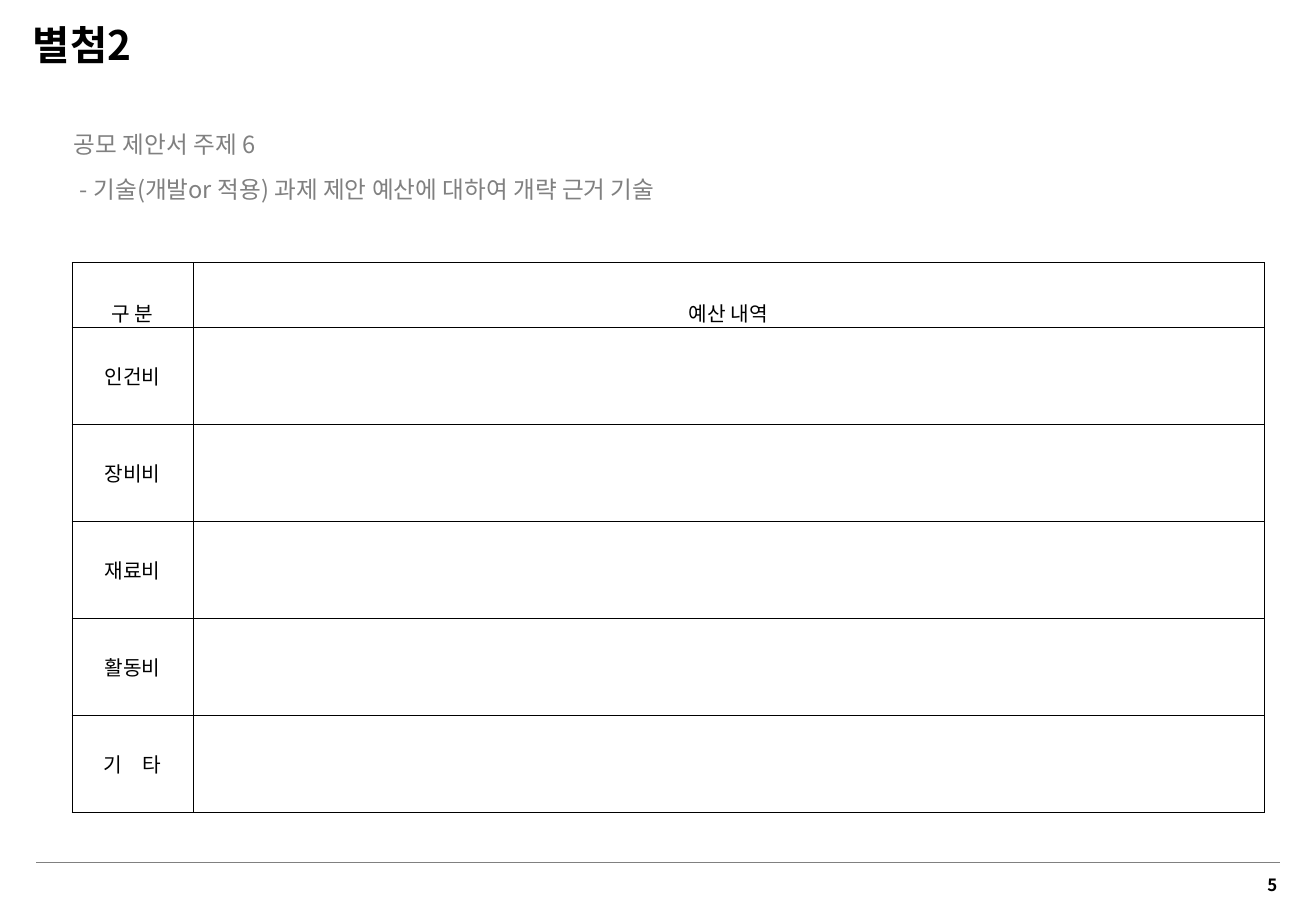
from dataclasses import dataclass

from lxml import etree
from pptx import Presentation
from pptx import util as u
from pptx.dml.color import RGBColor
from pptx.enum import shapes, text
from pptx.oxml import ns

TITLE = "별첨2"
GUIDE = [
    ("공모 제안서 주제 6", 0),
    ("- 기술(개발or 적용) 과제 제안 예산에 대하여 개략 근거 기술", 0.05),
]
HEADINGS = ["구 분", "예산 내역"]
COST_ITEMS = ["인건비", "장비비", "재료비", "활동비", "기　타"]
PAGE_NUMBER = "5"

COLUMN_WIDTHS = [1, 8.81]
HEADING_HEIGHT, ITEM_HEIGHT = 0.53, 0.8
TABLE_LEFT, TABLE_TOP = 0.59, 2.16


@dataclass(frozen=True)
class Theme:
    font: str = "Noto Sans CJK KR"
    black: str = "000000"
    grey: str = "808080"
    white: str = "FFFFFF"
    title: int = 24
    guide: int = 14
    table: int = 12
    page: int = 10
    border: float = 0.28
    rule: float = 0.75


THEME = Theme()
ALIGN = text.PP_ALIGN
MIDDLE = text.MSO_ANCHOR.MIDDLE


def style(paragraph, size, color, align, bold=False, spacing=1.0):
    paragraph.alignment = align
    paragraph.line_spacing = spacing
    paragraph.space_before = u.Pt(0)
    font = paragraph.font
    font.name, font.size, font.bold = THEME.font, u.Pt(size), bold
    font.color.rgb = RGBColor.from_string(color)
    properties = paragraph._p.pPr.find(ns.qn("a:defRPr"))
    etree.SubElement(properties, ns.qn("a:ea"), typeface=THEME.font)


def set_insets(frame, horizontal, vertical):
    frame.margin_left = frame.margin_right = u.Inches(horizontal)
    frame.margin_top = frame.margin_bottom = u.Inches(vertical)


def add_text_box(slide, left, top, width, height):
    box = slide.shapes.add_textbox(*map(u.Inches, (left, top, width, height)))
    box.text_frame.word_wrap = True
    return box.text_frame


def add_title(slide):
    title = slide.shapes.title
    title.left, title.top = u.Inches(0.17), u.Inches(0.13)
    title.width, title.height = u.Inches(5.24), u.Inches(0.47)
    frame = title.text_frame
    frame.text = TITLE
    frame.vertical_anchor = MIDDLE
    frame.auto_size = text.MSO_AUTO_SIZE.NONE
    set_insets(frame, 0.1, 0.04)
    style(frame.paragraphs[0], THEME.title, THEME.black, ALIGN.LEFT, bold=True)


def add_guide(slide):
    frame = add_text_box(slide, 0.51, 0.88, 9.7, 0.85)
    for index, (line, indent) in enumerate(GUIDE):
        paragraph = frame.add_paragraph() if index else frame.paragraphs[0]
        paragraph.text = line
        style(paragraph, THEME.guide, THEME.grey, ALIGN.JUSTIFY, spacing=1.6)
        paragraph._p.pPr.set("marL", str(u.Inches(indent)))


def format_cell(cell):
    properties = cell._tc.get_or_add_tcPr()
    for side in ("lnL", "lnR", "lnT", "lnB"):
        line = etree.SubElement(properties, ns.qn(f"a:{side}"), w=str(u.Pt(THEME.border)))
        fill = etree.SubElement(line, ns.qn("a:solidFill"))
        etree.SubElement(fill, ns.qn("a:srgbClr"), val=THEME.black)
    cell.fill.solid()
    cell.fill.fore_color.rgb = RGBColor.from_string(THEME.white)
    set_insets(cell, 0, 0)


def add_budget_table(slide):
    rows = [HEADINGS] + [[item, ""] for item in COST_ITEMS]
    heights = [HEADING_HEIGHT] + [ITEM_HEIGHT] * len(COST_ITEMS)
    bounds = (TABLE_LEFT, TABLE_TOP, sum(COLUMN_WIDTHS), sum(heights))
    table = slide.shapes.add_table(
        len(rows), len(COLUMN_WIDTHS), *map(u.Inches, bounds)
    ).table
    table.first_row = table.horz_banding = False
    for column, width in zip(table.columns, COLUMN_WIDTHS):
        column.width = u.Inches(width)
    for row_index, (row, height) in enumerate(zip(rows, heights)):
        table.rows[row_index].height = u.Inches(height)
        is_heading = row_index == 0
        for column_index, label in enumerate(row):
            cell = table.cell(row_index, column_index)
            format_cell(cell)
            cell.text = label
            cell.vertical_anchor = text.MSO_ANCHOR.TOP if is_heading else MIDDLE
            style(cell.text_frame.paragraphs[0], THEME.table, THEME.black,
                  ALIGN.CENTER, spacing=2.2 if is_heading else 1.0)


def add_footer(slide):
    ends = map(u.Inches, (0.3, 7.1, 10.53, 7.1))
    rule = slide.shapes.add_connector(shapes.MSO_CONNECTOR.STRAIGHT, *ends)
    rule.line.color.rgb = RGBColor.from_string(THEME.grey)
    rule.line.width = u.Pt(THEME.rule)
    etree.SubElement(rule._element.spPr, ns.qn("a:effectLst"))
    frame = add_text_box(slide, 10.09, 7.21, 0.76, 0.15)
    frame.text = PAGE_NUMBER
    frame.vertical_anchor = MIDDLE
    set_insets(frame, 0, 0)
    style(frame.paragraphs[0], THEME.page, THEME.black, ALIGN.CENTER, bold=True)


def main():
    presentation = Presentation()
    presentation.slide_width = u.Inches(10.83)
    presentation.slide_height = u.Inches(7.5)
    slide = presentation.slides.add_slide(presentation.slide_layouts[5])
    add_footer(slide)
    add_guide(slide)
    add_title(slide)
    add_budget_table(slide)
    presentation.save("out.pptx")


if __name__ == "__main__":
    main()
